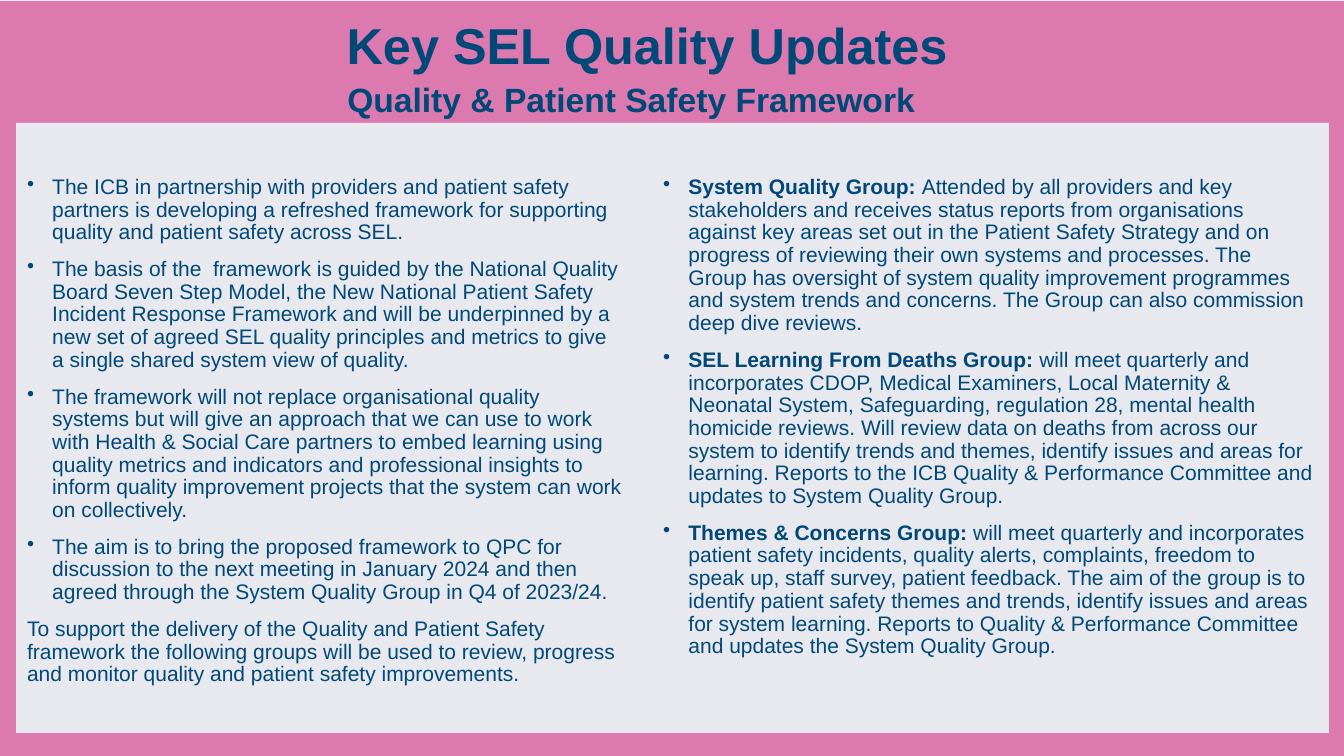
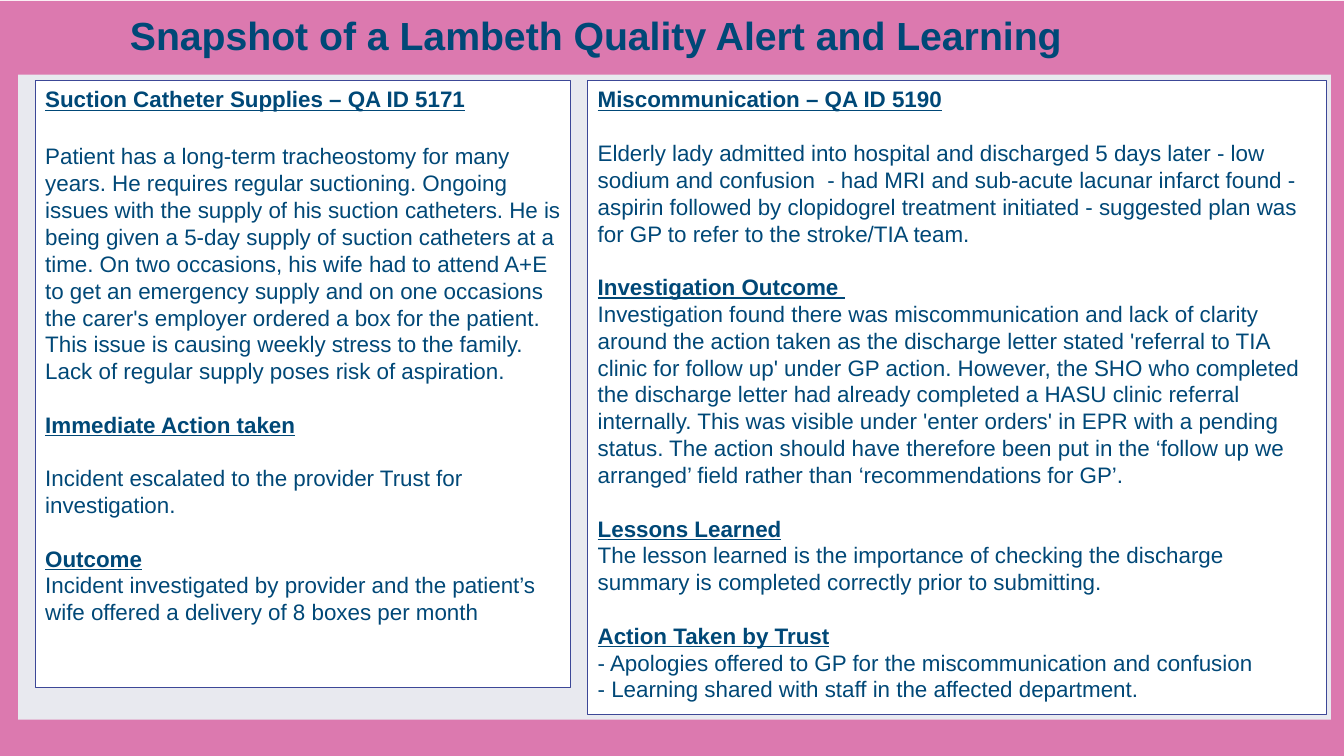
from dataclasses import dataclass

from lxml import etree
from pptx import Presentation
from pptx.dml.color import RGBColor
from pptx.enum.shapes import MSO_SHAPE
from pptx.enum.text import MSO_ANCHOR, PP_ALIGN
from pptx.oxml.ns import qn
from pptx.util import Inches, Pt

RECTANGLE = MSO_SHAPE.RECTANGLE
TOP, MIDDLE = MSO_ANCHOR.TOP, MSO_ANCHOR.MIDDLE
LEFT, CENTER = PP_ALIGN.LEFT, PP_ALIGN.CENTER
BLANK_LAYOUT = 6


@dataclass(frozen=True)
class Theme:
    font: str = "Arial"
    text: RGBColor = RGBColor(0x00, 0x48, 0x77)
    frame: RGBColor = RGBColor(0xDC, 0x79, 0xAF)
    panel: RGBColor = RGBColor(0xE8, 0xE9, 0xEF)
    card: RGBColor = RGBColor(0xFF, 0xFF, 0xFF)
    card_line: RGBColor = RGBColor(0x3C, 0x47, 0x97)
    title: float = 36
    alert_title: float = 28
    subtitle: float = 24
    card_text: float = 16
    bullet_text: float = 15
    bullet_gap: float = 10
    section_gap: float = 19


THEME = Theme()

FRAMEWORK_POINTS = [
    ("", "The ICB in partnership with providers and patient safety partners is developing a refreshed "
         "framework for supporting quality and patient safety across SEL."),
    ("", "The basis of the  framework is guided by the National Quality Board Seven Step Model, the New "
         "National Patient Safety Incident Response Framework and will be underpinned by a new set of "
         "agreed SEL quality principles and metrics to give a single shared system view of quality."),
    ("", "The framework will not replace organisational quality systems but will give an approach that we "
         "can use to work with Health & Social Care partners to embed learning using quality metrics and "
         "indicators and professional insights to inform quality improvement projects that the system can "
         "work on collectively."),
    ("", "The aim is to bring the proposed framework to QPC for discussion to the next meeting in January "
         "2024 and then agreed through the System Quality Group in Q4 of 2023/24."),
]
FRAMEWORK_CLOSING = (
    "To support the delivery of the Quality and Patient Safety framework the following groups will be used "
    "to review, progress and monitor quality and patient safety improvements.")
GROUPS = [
    ("System Quality Group: ",
     "Attended by all providers and key stakeholders and receives status reports from organisations against "
     "key areas set out in the Patient Safety Strategy and on progress of reviewing their own systems and "
     "processes. The Group has oversight of system quality improvement programmes and system trends and "
     "concerns. The Group can also commission deep dive reviews."),
    ("SEL Learning From Deaths Group: ",
     "will meet quarterly and incorporates CDOP, Medical Examiners, Local Maternity & Neonatal System, "
     "Safeguarding, regulation 28, mental health homicide reviews. Will review data on deaths from across "
     "our system to identify trends and themes, identify issues and areas for learning. Reports to the ICB "
     "Quality & Performance Committee and updates to System Quality Group."),
    ("Themes & Concerns Group: ",
     "will meet quarterly and incorporates patient safety incidents, quality alerts, complaints, freedom to "
     "speak up, staff survey, patient feedback. The aim of the group is to identify patient safety themes "
     "and trends, identify issues and areas for system learning. Reports to Quality & Performance Committee "
     "and updates the System Quality Group."),
]

# Each section: heading, gap below the heading in points, body paragraphs
CATHETER_ALERT = [
    ("Suction Catheter Supplies – QA ID 5171", 21.5, [
        "Patient has a long-term tracheostomy for many years. He requires regular suctioning. Ongoing issues "
        "with the supply of his suction catheters. He is being given a 5-day supply of suction catheters at a "
        "time. On two occasions, his wife had to attend A+E to get an emergency supply and on one occasions "
        "the carer's employer ordered a box for the patient. This issue is causing weekly stress to the "
        "family. Lack of regular supply poses risk of aspiration."]),
    ("Immediate Action taken", THEME.section_gap, [
        "Incident escalated to the provider Trust for investigation."]),
    ("Outcome", 0, [
        "Incident investigated by provider and the patient’s wife offered a delivery of 8 boxes per month"]),
]
MISCOMMUNICATION_ALERT = [
    ("Miscommunication – QA ID 5190", THEME.section_gap, [
        "Elderly lady admitted into hospital and discharged 5 days later - low sodium and confusion  - had MRI "
        "and sub-acute lacunar infarct found - aspirin followed by clopidogrel treatment initiated - suggested "
        "plan was for GP to refer to the stroke/TIA team."]),
    ("Investigation Outcome ", 0, [
        "Investigation found there was miscommunication and lack of clarity around the action taken as the "
        "discharge letter stated 'referral to TIA clinic for follow up' under GP action. However, the SHO who "
        "completed the discharge letter had already completed a HASU clinic referral internally. This was "
        "visible under 'enter orders' in EPR with a pending status. The action should have therefore been put "
        "in the ‘follow up we arranged’ field rather than ‘recommendations for GP’."]),
    ("Lessons Learned", 0, [
        "The lesson learned is the importance of checking the discharge summary is completed correctly prior "
        "to submitting."]),
    ("Action Taken by Trust", 0, [
        "- Apologies offered to GP for the miscommunication and confusion",
        "- Learning shared with staff in the affected department."]),
]


def place(box):
    return [Inches(length) for length in box]


def add_rectangle(slide, box, fill, line=None):
    rectangle = slide.shapes.add_shape(RECTANGLE, *place(box))
    rectangle.shadow.inherit = False
    rectangle.fill.solid()
    rectangle.fill.fore_color.rgb = fill
    if line is None:
        rectangle.line.fill.background()
    else:
        rectangle.line.color.rgb = line
        rectangle.line.width = Pt(1)
    return rectangle


def add_text_area(slide, box, anchor=TOP):
    frame = slide.shapes.add_textbox(*place(box)).text_frame
    frame.word_wrap = True
    frame.vertical_anchor = anchor
    return frame


def add_paragraph(frame, runs, size, bold=None, underline=None, gap=0, spacing=None,
                  align=LEFT, bullet=False):
    """Write (text, bold) runs into the next free paragraph of the frame."""
    first = not frame.paragraphs[0].runs
    paragraph = frame.paragraphs[0] if first else frame.add_paragraph()
    if bullet:
        properties = paragraph._p.get_or_add_pPr()
        properties.set("marL", str(Inches(0.25)))
        properties.set("indent", str(-Inches(0.25)))
        etree.SubElement(properties, qn("a:buChar")).set("char", "•")
    paragraph.alignment = align
    if spacing:
        paragraph.line_spacing = spacing
    if gap and not first:
        paragraph.space_before = Pt(gap)
    font = paragraph.font
    font.name, font.size = THEME.font, Pt(size)
    font.bold, font.underline = bold, underline
    font.color.rgb = THEME.text
    for text, run_bold in runs:
        run = paragraph.add_run()
        run.text = text
        if run_bold:
            run.font.bold = True


def add_heading(slide, box, text, size, **layout):
    frame = add_text_area(slide, box, MIDDLE)
    add_paragraph(frame, [(text, None)], size, bold=True, **layout)


def add_framed_slide(deck, panel_box):
    """Pink frame with a pale content panel, shared by every slide."""
    slide = deck.slides.add_slide(deck.slide_layouts[BLANK_LAYOUT])
    add_rectangle(slide, (0, 0.01, 13.33, 7.49), THEME.frame)
    add_rectangle(slide, panel_box, THEME.panel)
    return slide


def add_bullet_column(slide, box, points, closing=None):
    frame = add_text_area(slide, box)
    style = {"size": THEME.bullet_text, "gap": THEME.bullet_gap, "spacing": 0.9}
    for lead, text in points:
        runs = [(lead, True)] if lead else []
        add_paragraph(frame, runs + [(text, None)], bullet=True, **style)
    if closing:
        add_paragraph(frame, [(closing, None)], **style)


def add_alert_card(slide, box, sections):
    frame = add_rectangle(slide, box, THEME.card, THEME.card_line).text_frame
    frame.word_wrap = True
    frame.vertical_anchor = TOP
    for heading, body_gap, body in sections:
        add_paragraph(frame, [(heading, None)], THEME.card_text, bold=True, underline=True,
                      gap=THEME.section_gap)
        for index, text in enumerate(body):
            add_paragraph(frame, [(text, None)], THEME.card_text, gap=0 if index else body_gap)


def build_framework_slide(deck):
    slide = add_framed_slide(deck, (0.16, 1.22, 13.02, 6.05))
    add_heading(slide, (1.44, 0.65, 9.64, 0.72), "Quality & Patient Safety Framework",
                THEME.subtitle, align=CENTER, spacing=0.9)
    add_heading(slide, (2.31, 0.08, 8.22, 0.71), "Key SEL Quality Updates", THEME.title, align=CENTER)
    column_top, column_height = 1.7, 5.36
    add_bullet_column(slide, (0.17, column_top, 6.1, column_height), FRAMEWORK_POINTS, FRAMEWORK_CLOSING)
    add_bullet_column(slide, (6.48, column_top, 6.67, column_height), GROUPS)


def build_alert_slide(deck):
    slide = add_framed_slide(deck, (0.18, 0.74, 13.02, 6.4))
    card_top = 0.8
    add_alert_card(slide, (0.35, card_top, 5.31, 6.02), CATHETER_ALERT)
    add_alert_card(slide, (5.83, card_top, 7.33, 6.29), MISCOMMUNICATION_ALERT)
    add_heading(slide, (1.19, 0.06, 10.95, 0.57), "Snapshot of a Lambeth Quality Alert and Learning",
                THEME.alert_title)


def main():
    deck = Presentation()
    deck.slide_width, deck.slide_height = Inches(13.33), Inches(7.5)
    build_framework_slide(deck)
    build_alert_slide(deck)
    deck.save("out.pptx")


if __name__ == "__main__":
    main()
